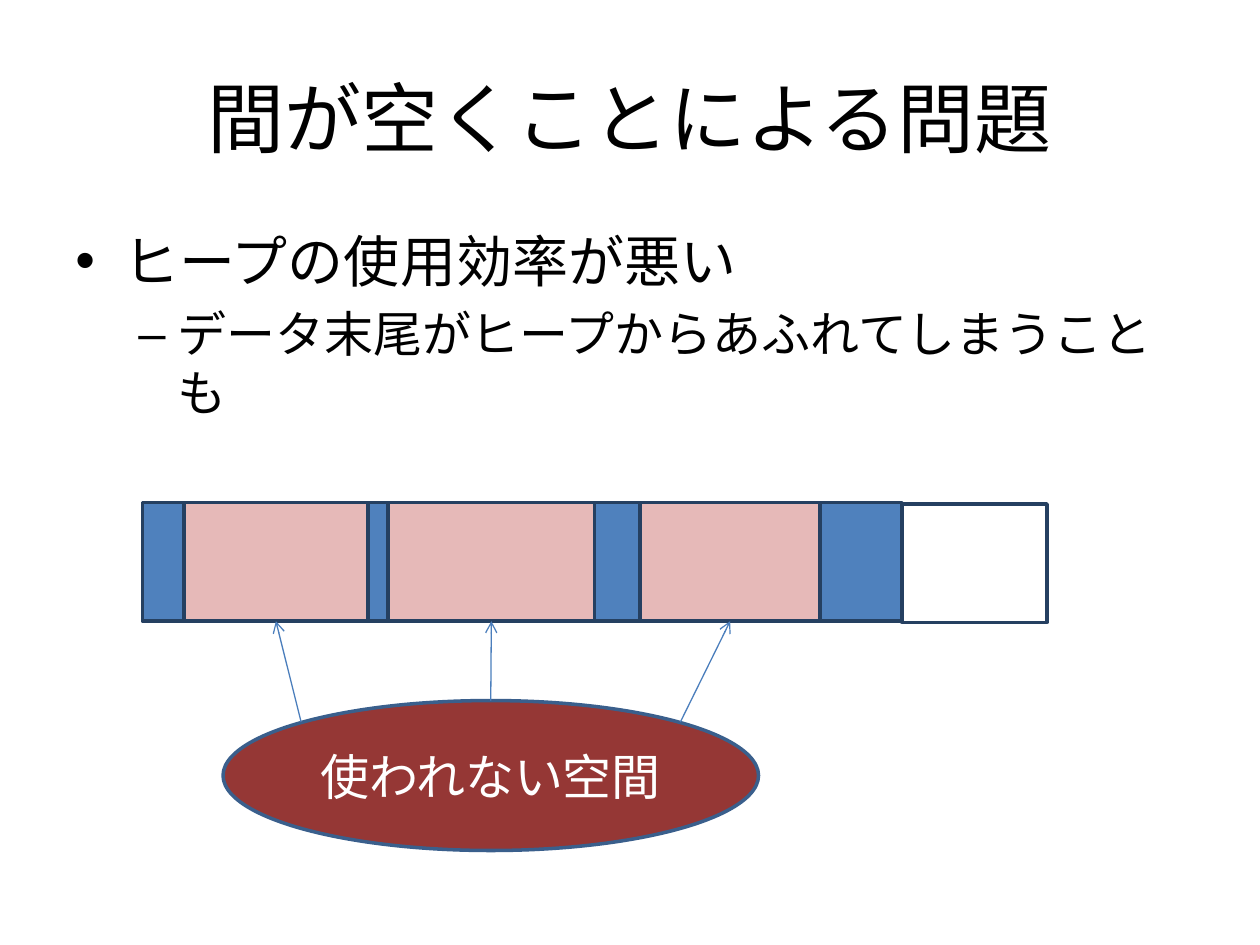
from pptx import Presentation
from pptx.dml.color import RGBColor
from pptx.enum.shapes import MSO_CONNECTOR as Conn, MSO_SHAPE as Kind
from pptx.enum.text import MSO_ANCHOR as Anchor, PP_ALIGN as Align
from pptx.oxml.ns import qn
from pptx.util import Inches, Pt
from lxml.etree import SubElement as Sub


def rgb(code):
    """Return the colour for a hex string."""
    return RGBColor.from_string(code)


class Deck:
    """Holds the style and the current slide."""

    font = "Calibri"
    ink, white = "000000", "FFFFFF"
    used, waste = "4F81BD", "E6B9B8"
    edge, rim, note, wire = "254061", "3A5F8C", "953735", "4B7EBC"

    def __init__(self, slide):
        """Keep the slide to draw on."""
        self.slide = slide

    def style(self, para, size, color):
        """Format every run of a paragraph."""
        for run in para.runs:
            run.font.name = self.font
            run.font.size = Pt(size)
            run.font.color.rgb = rgb(color)

    def title(self, text, *box):
        """Fill and place the title."""
        head = self.slide.shapes.title
        head.left, head.top, head.width, head.height = map(Inches, box)
        frame = head.text_frame
        frame.text = text
        frame.vertical_anchor = Anchor.MIDDLE
        frame.paragraphs[0].alignment = Align.CENTER
        self.style(frame.paragraphs[0], 44, self.ink)

    def bullets(self, items, *box):
        """Add a bulleted list of text, level, size, mark, indent and hang."""
        frame = self.slide.shapes.add_textbox(*map(Inches, box)).text_frame
        frame.word_wrap = True
        for i, (text, level, size, mark, left, hang) in enumerate(items):
            para = frame.add_paragraph() if i else frame.paragraphs[0]
            para.text = text
            para.level = level
            para.space_before = Pt(size * 0.2)
            self.style(para, size, self.ink)
            props = para._p.get_or_add_pPr()
            props.set("marL", str(Inches(left)))
            props.set("indent", str(-Inches(hang)))
            Sub(props, qn("a:buFont"), typeface="Arial")
            Sub(props, qn("a:buChar"), char=mark)

    def shape(self, kind, fill, line, *box):
        """Add a filled and outlined shape."""
        item = self.slide.shapes.add_shape(kind, *map(Inches, box))
        item.shadow.inherit = False
        item.fill.solid()
        item.fill.fore_color.rgb = rgb(fill)
        item.line.color.rgb = rgb(line)
        item.line.width = Pt(2)
        return item

    def label(self, item, text, size):
        """Centre white text in a shape."""
        frame = item.text_frame
        frame.text = text
        frame.vertical_anchor = Anchor.MIDDLE
        frame.paragraphs[0].alignment = Align.CENTER
        self.style(frame.paragraphs[0], size, self.white)

    def arrow(self, x, y, block):
        """Point from a spot to the bottom of a block."""
        start = Inches(x), Inches(y)
        link = self.slide.shapes.add_connector(Conn.STRAIGHT, *start, *start)
        link.end_connect(block, 2)
        link.line.color.rgb = rgb(self.wire)
        link.line.width = Pt(0.75)
        Sub(link.line._get_or_add_ln(), qn("a:tailEnd"), type="arrow")
        Sub(link._element.spPr, qn("a:effectLst"))
        return link


def main():
    """Build and save the slide."""
    show = Presentation()
    show.slide_width, show.slide_height = Inches(10), Inches(7.5)
    deck = Deck(show.slides.add_slide(show.slide_layouts[5]))
    deck.title("間が空くことによる問題", 0.5, 0.3, 9, 1.25)
    deck.bullets([
        ("ヒープの使用効率が悪い", 0, 32, "•", 0.38, 0.38),
        ("データ末尾がヒープからあふれてしまうことも", 1, 28, "–", 0.81, 0.31),
    ], 0.5, 1.75, 9, 1.69)

    deck.shape(Kind.RECTANGLE, deck.white, deck.edge, 7.16, 4, 1.15, 0.94)
    edges = [1.13, 1.46, 2.92, 3.08, 4.72, 5.08, 6.51, 7.16]
    gaps = []
    for i, (left, right) in enumerate(zip(edges, edges[1:])):
        fill = deck.waste if i % 2 else deck.used
        block = deck.shape(Kind.RECTANGLE, fill, deck.edge,
                           left, 3.99, right - left, 0.94)
        if i % 2:
            gaps.append(block)

    bubble = deck.shape(Kind.OVAL, deck.note, deck.rim, 1.77, 5.56, 4.25, 1.19)
    deck.label(bubble, "使われない空間", 28)
    starts = [(2.39, 5.73), (3.9, 5.56), (5.4, 5.73)]
    links = [deck.arrow(x, y, gap) for (x, y), gap in zip(starts, gaps)]
    links[1].begin_connect(bubble, 0)
    show.save("out.pptx")


if __name__ == "__main__":
    main()
